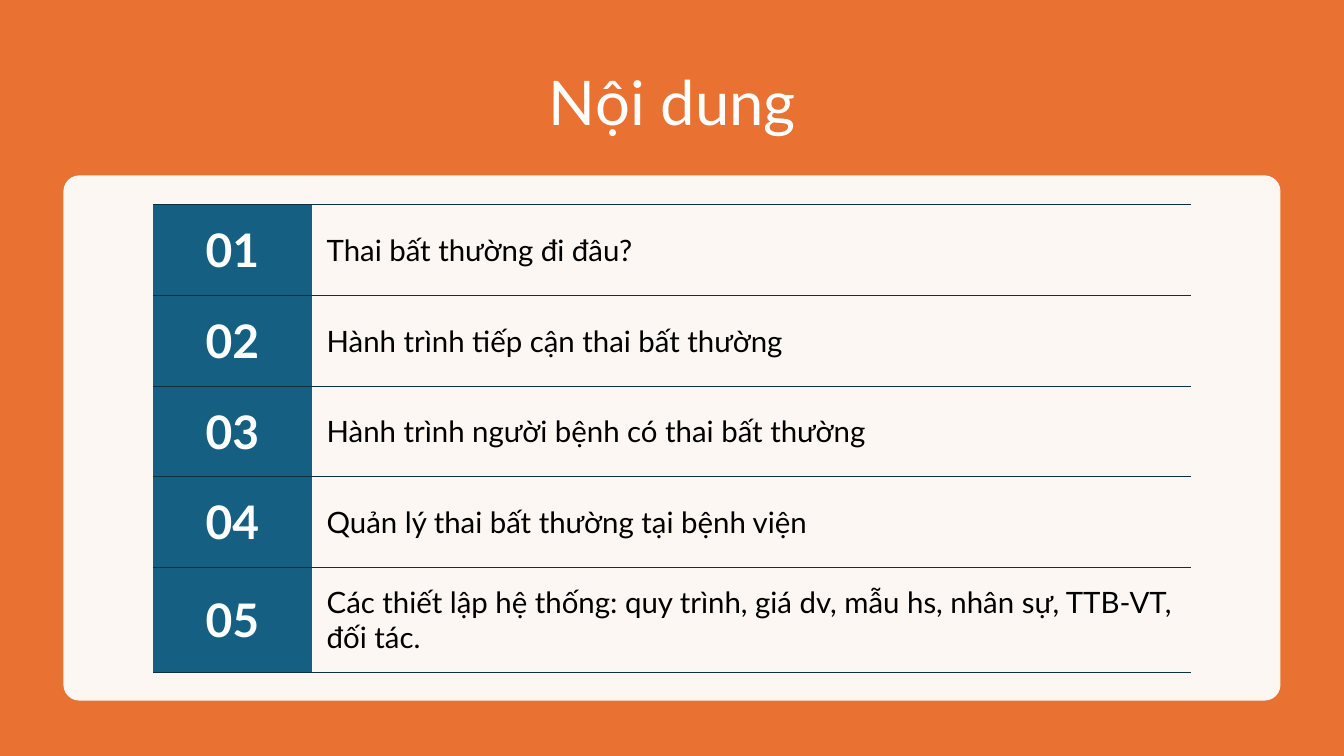
from lxml import etree
from pptx import Presentation, util as u
from pptx.dml.color import RGBColor
from pptx.enum import shapes, text
from pptx.oxml import ns

WIDTH, HEIGHT = 13.33, 7.5
FONT = "Lato"
ORANGE, WHITE, BLACK = "E97132", "FFFFFF", "000000"
BLUE, RULE = "156082", "0B3041"
COLUMNS = [1.57, 8.72]
ROWS = [0.9] * 4 + [1.04]
TOPICS = [
    "Thai bất thường đi đâu?",
    "Hành trình tiếp cận thai bất thường",
    "Hành trình người bệnh có thai bất thường",
    "Quản lý thai bất thường tại bệnh viện",
    "Các thiết lập hệ thống: quy trình, giá dv, mẫu hs, nhân sự, TTB-VT, đối tác.",
]


def color(value):
    return RGBColor.from_string(value)


def inches(*lengths):
    return [u.Inches(length) for length in lengths]


def write(frame, content, size, fill, bold=False, align=text.PP_ALIGN.LEFT, spacing=1.0):
    frame.word_wrap = True
    paragraph = frame.paragraphs[0]
    paragraph.alignment = align
    paragraph.line_spacing = spacing
    run = paragraph.add_run()
    run.text = content
    run.font.name = FONT
    run.font.size = u.Pt(size)
    run.font.bold = bold
    run.font.color.rgb = color(fill)


def add_panel(slide, kind, box, fill, opacity=100):
    shape = slide.shapes.add_shape(kind, *inches(*box))
    shape.shadow.inherit = False
    shape.fill.solid()
    shape.fill.fore_color.rgb = color(fill)
    shape.line.fill.background()
    if opacity < 100:
        tone = shape.fill._xPr.find(".//" + ns.qn("a:srgbClr"))
        etree.SubElement(tone, ns.qn("a:alpha"), val=str(opacity * 1000))
    return shape


def add_title(slide, content):
    title = slide.shapes.add_textbox(*inches(0.92, 0.5, 11.5, 1.1))
    title.text_frame.vertical_anchor = text.MSO_ANCHOR.MIDDLE
    write(title.text_frame, content, 44, WHITE, align=text.PP_ALIGN.CENTER, spacing=0.9)


def set_borders(cell):
    properties = cell._tc.get_or_add_tcPr()
    for side in "LRTB":
        line = etree.SubElement(properties, ns.qn("a:ln" + side), w=str(u.Pt(0.5)))
        if side in "LR":
            etree.SubElement(line, ns.qn("a:noFill"))
        else:
            solid = etree.SubElement(line, ns.qn("a:solidFill"))
            etree.SubElement(solid, ns.qn("a:srgbClr"), val=RULE)


def fill_cell(cell, content, size, ink, fill=None, **style):
    cell.margin_left = cell.margin_right = u.Inches(0.15)
    cell.margin_top = cell.margin_bottom = u.Inches(0.15)
    cell.vertical_anchor = text.MSO_ANCHOR.MIDDLE
    set_borders(cell)
    if fill:
        cell.fill.solid()
        cell.fill.fore_color.rgb = color(fill)
    else:
        cell.fill.background()
    write(cell.text_frame, content, size, ink, **style)


def add_agenda(slide, topics):
    box = inches(1.52, 2.03, sum(COLUMNS), sum(ROWS))
    table = slide.shapes.add_table(len(ROWS), len(COLUMNS), *box).table
    table.first_row = table.horz_banding = False
    for column, width in zip(table.columns, COLUMNS):
        column.width = u.Inches(width)
    for index, (height, topic) in enumerate(zip(ROWS, topics)):
        table.rows[index].height = u.Inches(height)
        fill_cell(table.cell(index, 0), f"{index + 1:02}", 33, WHITE, BLUE,
                  bold=True, align=text.PP_ALIGN.CENTER)
        fill_cell(table.cell(index, 1), topic, 21, BLACK)


def main():
    presentation = Presentation()
    presentation.slide_width, presentation.slide_height = inches(WIDTH, HEIGHT)
    slide = presentation.slides.add_slide(presentation.slide_layouts[6])
    add_panel(slide, shapes.MSO_SHAPE.RECTANGLE, (0, 0, WIDTH, HEIGHT), ORANGE)
    add_title(slide, "Nội dung")
    card = add_panel(slide, shapes.MSO_SHAPE.ROUNDED_RECTANGLE,
                     (0.63, 1.74, 12.07, 5.21), WHITE, opacity=95)
    card.adjustments[0] = 0.03
    add_agenda(slide, TOPICS)
    presentation.save("out.pptx")


if __name__ == "__main__":
    main()
